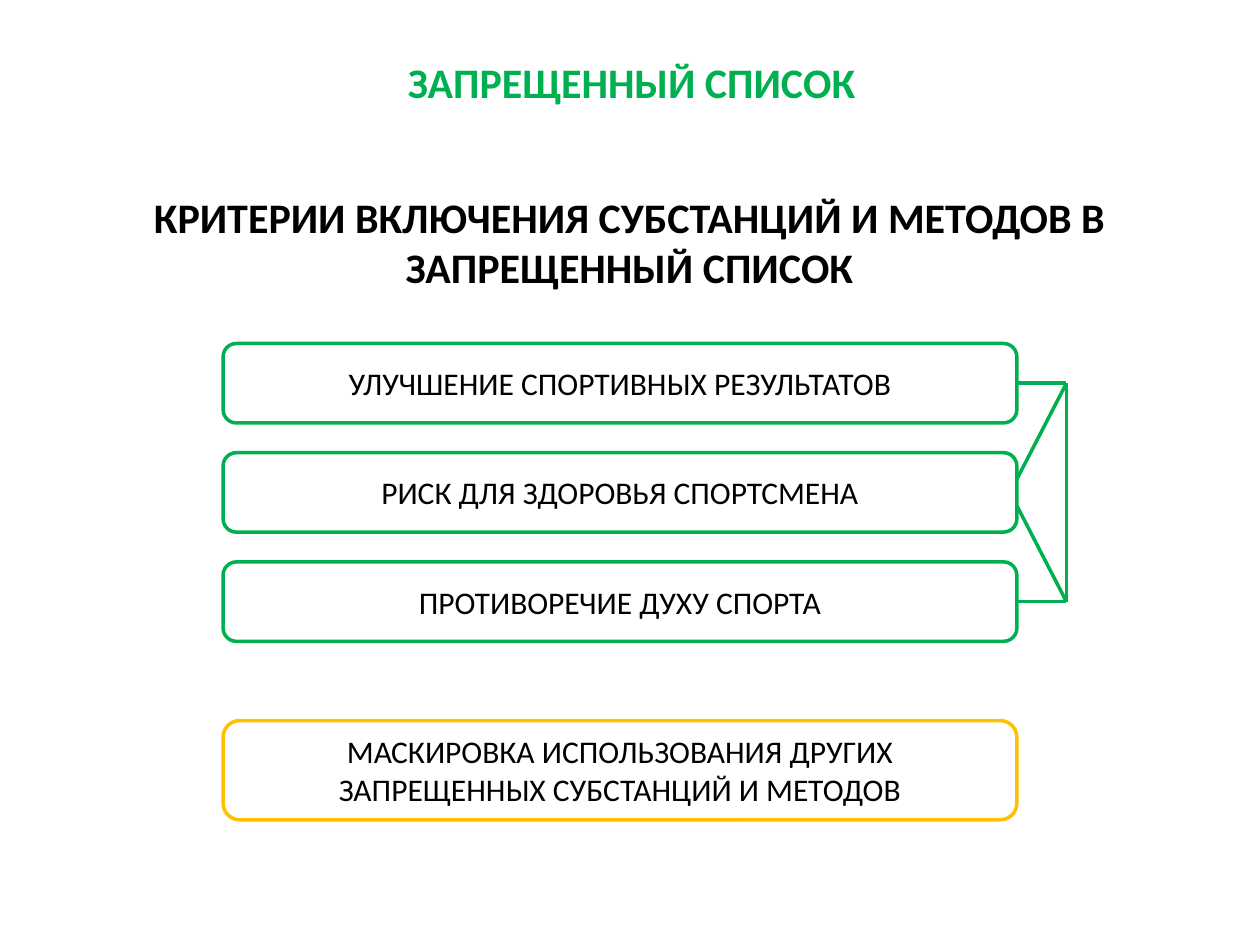
from dataclasses import dataclass
from lxml.etree import SubElement
from pptx import Presentation
from pptx.dml.color import RGBColor
from pptx.enum.shapes import MSO_CONNECTOR, MSO_SHAPE
from pptx.enum.text import MSO_ANCHOR, PP_ALIGN
from pptx.oxml.ns import qn
from pptx.util import Pt


@dataclass(frozen=True)
class Theme:
    green: RGBColor = RGBColor(0x00, 0xB0, 0x50)
    gold: RGBColor = RGBColor(0xFF, 0xC0, 0x00)
    ink: RGBColor = RGBColor(0x00, 0x00, 0x00)
    font: str = "Calibri"
    head: int = 24
    body: int = 18
    line: int = 2


theme = Theme()


def write(shape, text, size, color, bold, align, anchor):
    frame = shape.text_frame
    frame.word_wrap = True
    frame.vertical_anchor = anchor
    frame.text = text
    para = frame.paragraphs[0]
    para.alignment = align
    font = para.runs[0].font
    font.name = theme.font
    font.size = Pt(size)
    font.bold = bold
    font.color.rgb = color


deck = Presentation()
deck.slide_width, deck.slide_height = Pt(720), Pt(540)
slide = deck.slides.add_slide(deck.slide_layouts[6])
shapes = slide.shapes

title = shapes.add_textbox(Pt(195.8), Pt(9.4), Pt(300.2), Pt(74.2))
write(title, "ЗАПРЕЩЕННЫЙ СПИСОК", theme.head, theme.green, True,
      PP_ALIGN.RIGHT, MSO_ANCHOR.MIDDLE)

lead = shapes.add_textbox(Pt(70.6), Pt(105.8), Pt(578.2), Pt(391))
write(lead, "КРИТЕРИИ ВКЛЮЧЕНИЯ СУБСТАНЦИЙ И МЕТОДОВ В ЗАПРЕЩЕННЫЙ СПИСОК",
      theme.head, theme.ink, True, PP_ALIGN.CENTER, MSO_ANCHOR.TOP)

left, top, width, height, step = 127.5, 196.3, 453.6, 45.4, 62.4
rules = [
    "УЛУЧШЕНИЕ СПОРТИВНЫХ РЕЗУЛЬТАТОВ",
    "РИСК ДЛЯ ЗДОРОВЬЯ СПОРТСМЕНА",
    "ПРОТИВОРЕЧИЕ ДУХУ СПОРТА",
]
boxes = [(text, top + i * step, height, theme.green)
         for i, text in enumerate(rules)]
boxes.append(("МАСКИРОВКА ИСПОЛЬЗОВАНИЯ ДРУГИХ ЗАПРЕЩЕННЫХ СУБСТАНЦИЙ И МЕТОДОВ",
              411.8, 56.7, theme.gold))

for text, y, tall, color in boxes:
    box = shapes.add_shape(MSO_SHAPE.ROUNDED_RECTANGLE,
                           Pt(left), Pt(y), Pt(width), Pt(tall))
    box.shadow.inherit = False
    box.fill.background()
    box.line.color.rgb = color
    box.line.width = Pt(theme.line)
    write(box, text, theme.body, theme.ink, False,
          PP_ALIGN.CENTER, MSO_ANCHOR.MIDDLE)

edge = left + width
side = edge + 28.3
high = top + height / 2
mid = high + step
low = mid + step
gap = 7.6
links = [
    (edge, high, side, high),
    (edge, low, side, low),
    (side, high, side, low),
    (side, high, edge, mid - gap),
    (edge, mid + gap, side, low),
]
for ends in links:
    link = shapes.add_connector(MSO_CONNECTOR.STRAIGHT, *map(Pt, ends))
    link.line.color.rgb = theme.green
    link.line.width = Pt(theme.line)
    SubElement(link._element.spPr, qn("a:effectLst"))

deck.save("out.pptx")
